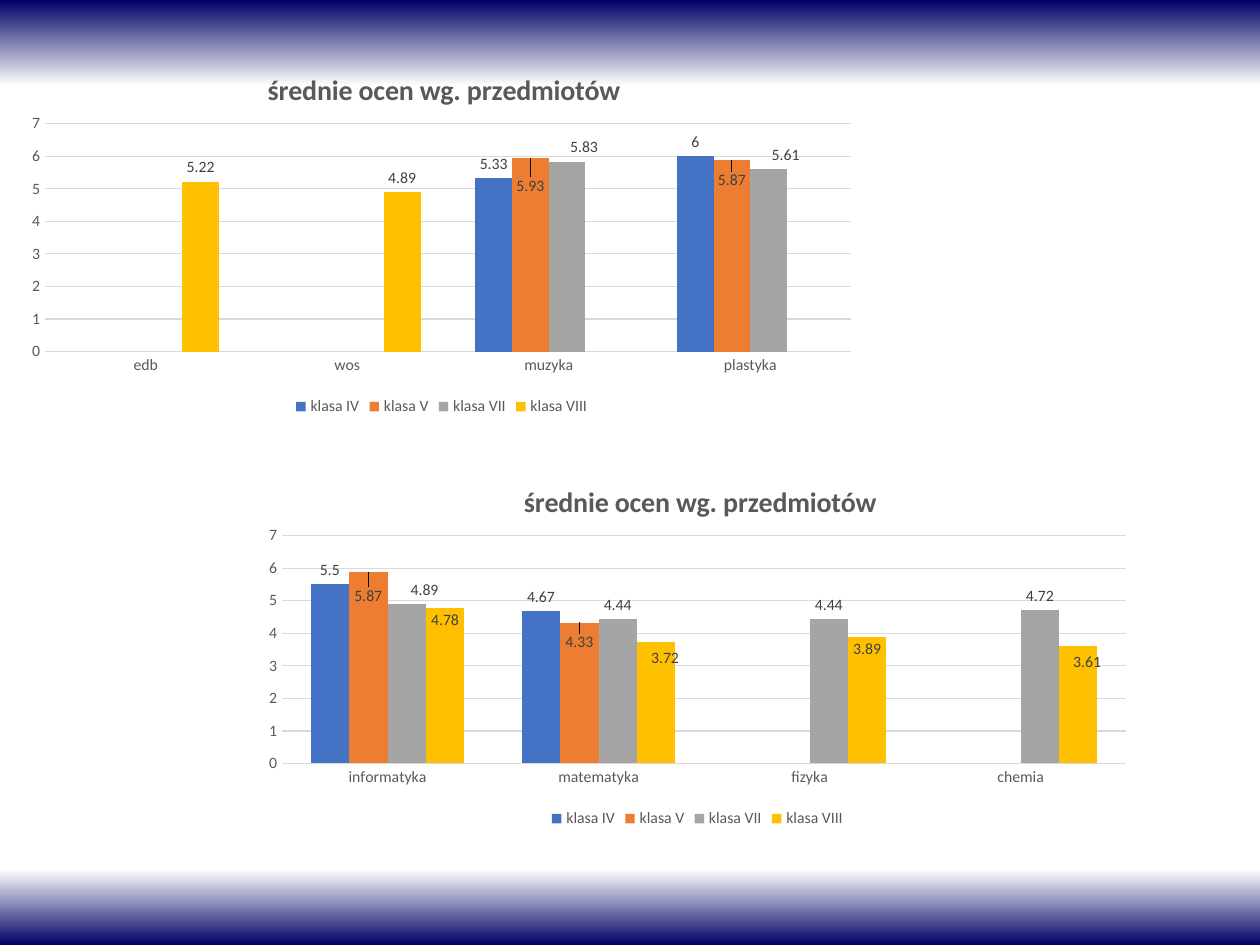
from lxml.etree import SubElement
from pptx import Presentation
from pptx.chart.data import CategoryChartData
from pptx.dml.color import RGBColor
from pptx.enum.chart import (XL_CHART_TYPE, XL_LABEL_POSITION,
                             XL_LEGEND_POSITION, XL_TICK_MARK)
from pptx.enum.shapes import MSO_SHAPE
from pptx.oxml import parse_xml
from pptx.oxml.ns import nsdecls, qn
from pptx.util import Inches, Pt

# Content
FONT = "Calibri"
COLORS = {"navy": "000066", "white": "FFFFFF", "text": "595959",
          "label": "404040", "grid": "D9D9D9", "klasa IV": "4472C4",
          "klasa V": "ED7D31", "klasa VII": "A5A5A5", "klasa VIII": "FFC000"}
TITLE = "średnie ocen wg. przedmiotów"
BANDS = [(0, 0.68, "navy", "white"), (6.9, 0.6, "white", "navy")]
# "moved" holds label shifts as shares of the chart, by series and category
CHARTS = [
    {"at": (0.12, 0.34, 6.77, 3), "title_x": 0.29,
     "cats": ["edb", "wos", "muzyka", "plastyka"],
     "series": {"klasa IV": [None, None, 5.33, 6],
                "klasa V": [None, None, 5.93, 5.87],
                "klasa VII": [None, None, 5.83, 5.61],
                "klasa VIII": [5.22, 4.89, None, None]},
     "moved": {"klasa V": {2: (0, 0.11), 3: (0, 0.09)},
               "klasa VII": {2: (0.02, 0), 3: (0.02, 0)}}},
    {"at": (1.99, 3.61, 7.09, 3), "title_x": 0.3,
     "cats": ["informatyka", "matematyka", "fizyka", "chemia"],
     "series": {"klasa IV": [5.5, 4.67, None, None],
                "klasa V": [5.87, 4.33, None, None],
                "klasa VII": [4.89, 4.44, 4.44, 4.72],
                "klasa VIII": [4.78, 3.72, 3.89, 3.61]},
     "moved": {"klasa V": {0: (0, 0.1), 1: (0, 0.09)},
               "klasa VII": {0: (0.02, 0)},
               "klasa VIII": {0: (0, 0.07), 1: (0.01, 0.08),
                              2: (0, 0.07), 3: (0.01, 0.08)}}},
]


def rgb(name):
    return RGBColor.from_string(COLORS[name])


def set_font(font, size, color, bold=False):
    font.name, font.size, font.bold = FONT, Pt(size), bold
    font.color.rgb = rgb(color)


def make_layout(**values):
    """Return a manual c:layout element with the given settings."""
    layout = parse_xml(f"<c:layout {nsdecls('c')}/>")
    manual = SubElement(layout, qn("c:manualLayout"))
    for tag, value in values.items():
        SubElement(manual, qn("c:" + tag)).set("val", str(value))
    return layout


def put_layout(parent, after, layout):
    """Put the layout in parent, behind the child named after (or first)."""
    for old in parent.findall(qn("c:layout")):
        parent.remove(old)
    child = parent.find(qn(after)) if after else None
    if child is None:
        parent.insert(0, layout)
    else:
        child.addnext(layout)


def add_band(slide, top, height, start, end):
    s = slide.shapes.add_shape(MSO_SHAPE.RECTANGLE, 0, Inches(top),
                               prs.slide_width, Inches(height))
    s.shadow.inherit = False
    s.line.fill.background()
    s.fill.gradient()
    s.fill.gradient_angle = 270
    for stop, color, position in zip(s.fill.gradient_stops, (start, end), (0, 1)):
        stop.color.rgb = rgb(color)
        stop.position = position


def style_series(ser, moved):
    ser.format.fill.solid()
    ser.format.fill.fore_color.rgb = rgb(ser.name)
    labels = ser.data_labels
    labels.show_value = True
    labels.position = XL_LABEL_POSITION.OUTSIDE_END
    set_font(labels.font, 9, "label")
    for i in moved:
        label = ser.points[i].data_label
        label.position = XL_LABEL_POSITION.OUTSIDE_END
        set_font(label.font, 9, "label")
    for dlbl in ser._element.iter(qn("c:dLbl")):
        x, y = moved[int(dlbl.find(qn("c:idx")).get("val"))]
        put_layout(dlbl, "c:idx", make_layout(x=x, y=y))


def add_grade_chart(slide, spec_row):
    data = CategoryChartData()
    data.categories = spec_row["cats"]
    for name, values in spec_row["series"].items():
        data.add_series(name, values)
    chart = slide.shapes.add_chart(XL_CHART_TYPE.COLUMN_CLUSTERED,
                                   *map(Inches, spec_row["at"]), data).chart
    chart.font.name, chart.font.size = FONT, Pt(10)

    # Title
    tf = chart.chart_title.text_frame
    tf.text = TITLE
    set_font(tf.paragraphs[0].runs[0].font, 16, "text", bold=True)
    chart.chart_title.include_in_layout = False
    put_layout(chart.chart_title._element, "c:tx",
               make_layout(xMode="edge", yMode="edge",
                           x=spec_row["title_x"], y=0.06))

    # Axes and legend
    for axis in (chart.category_axis, chart.value_axis):
        axis.major_tick_mark = axis.minor_tick_mark = XL_TICK_MARK.NONE
        axis.format.line.fill.background()
        set_font(axis.tick_labels.font, 9, "text")
    axis = chart.value_axis
    axis.minimum_scale, axis.maximum_scale, axis.major_unit = 0, 7, 1
    axis.major_gridlines.format.line.color.rgb = rgb("grid")
    axis.major_gridlines.format.line.width = Pt(0.75)
    chart.has_legend = True
    chart.legend.position = XL_LEGEND_POSITION.BOTTOM
    chart.legend.include_in_layout = False
    set_font(chart.legend.font, 9, "text")

    # Plot and columns
    plot = chart.plots[0]
    plot.gap_width, plot.overlap, plot.vary_by_categories = 150, 0, False
    plot_area = plot._element.getparent()
    put_layout(plot_area, None,
               make_layout(layoutTarget="inner", xMode="edge", yMode="edge",
                           x=0.035, y=0.214, w=0.945, h=0.603))
    for ser in plot.series:
        style_series(ser, spec_row["moved"].get(ser.name, {}))


prs = Presentation()
prs.slide_width, prs.slide_height = Inches(10), Inches(7.5)
slide = prs.slides.add_slide(prs.slide_layouts[6])
for band in BANDS:
    add_band(slide, *band)
for row in CHARTS:
    add_grade_chart(slide, row)
prs.save("out.pptx")
